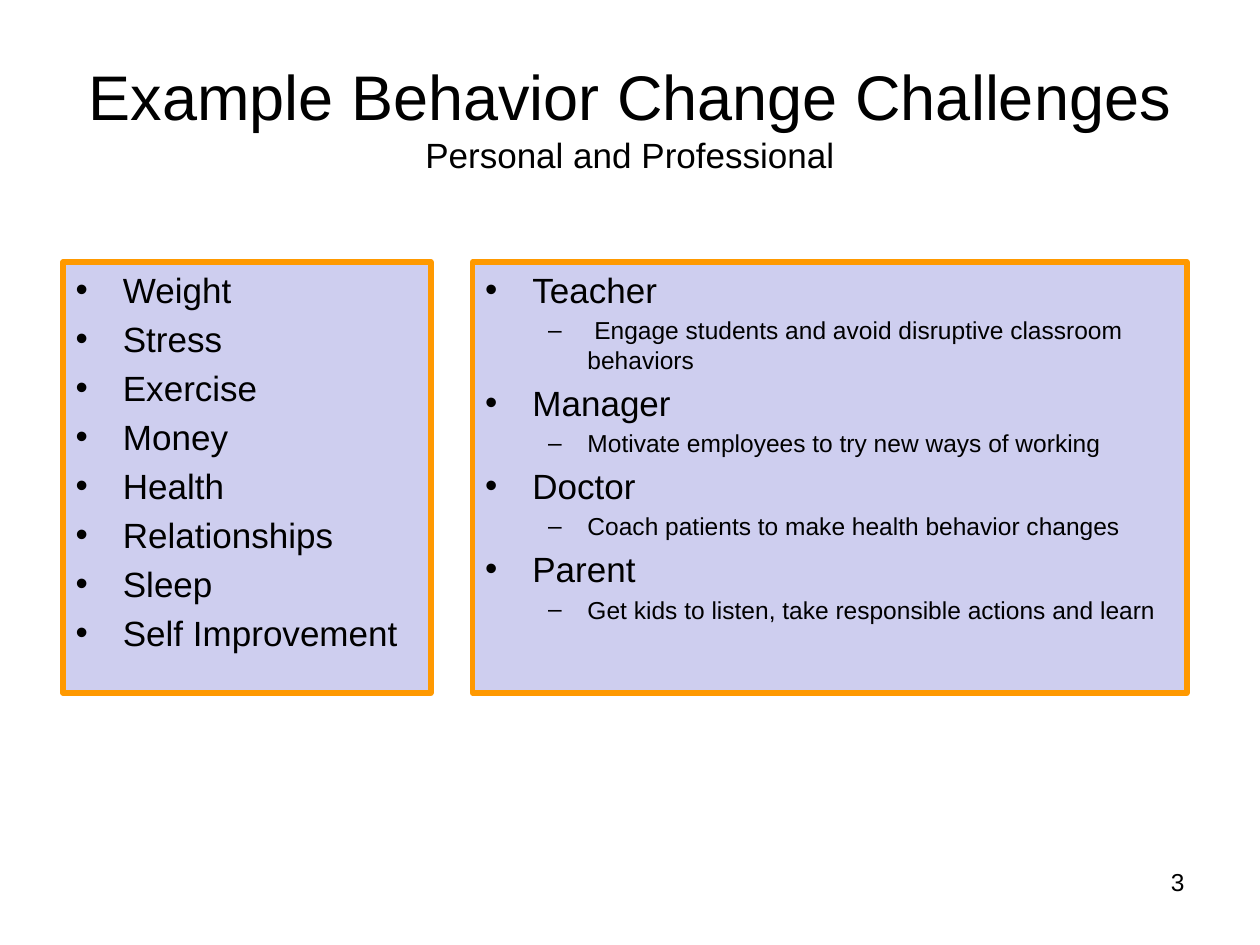
from dataclasses import dataclass

from pptx import Presentation
from pptx.dml.color import RGBColor
from pptx.enum.text import MSO_ANCHOR, MSO_AUTO_SIZE, PP_ALIGN
from pptx.util import Inches, Pt

CENTER, RIGHT = PP_ALIGN.CENTER, PP_ALIGN.RIGHT
MIDDLE, TOP = MSO_ANCHOR.MIDDLE, MSO_ANCHOR.TOP
NO_FIT = MSO_AUTO_SIZE.NONE
TWO_CONTENT = 3


@dataclass(frozen=True)
class Theme:
    font: str = "Arial"
    ink: RGBColor = RGBColor(0x00, 0x00, 0x00)
    panel: RGBColor = RGBColor(0xCE, 0xCE, 0xEF)
    border: RGBColor = RGBColor(0xFF, 0x99, 0x00)
    border_width: Pt = Pt(3)
    heading: Pt = Pt(36)
    item: Pt = Pt(20)
    detail: Pt = Pt(14)


THEME = Theme()
PANEL_TOP, PANEL_HEIGHT = 2.08, 3.42

PERSONAL = ["Weight", "Stress", "Exercise", "Money", "Health",
            "Relationships", "Sleep", "Self Improvement"]
PROFESSIONAL = {
    "Teacher": " Engage students and avoid disruptive classroom behaviors",
    "Manager": "Motivate employees to try new ways of working",
    "Doctor": "Coach patients to make health behavior changes",
    "Parent": "Get kids to listen, take responsible actions and learn",
}


def place(element, left, top, width, height):
    element.left, element.top = Inches(left), Inches(top)
    element.width, element.height = Inches(width), Inches(height)


def style(font, size):
    font.name = THEME.font
    font.size = size
    font.color.rgb = THEME.ink


def fill_title(title, heading, subtitle):
    place(title, 0.5, 0.3, 9, 1.25)
    frame = title.text_frame
    frame.auto_size = NO_FIT
    frame.vertical_anchor = MIDDLE
    line = frame.paragraphs[0]
    line.alignment = CENTER
    heading_run = line.add_run()
    heading_run.text = heading
    style(heading_run.font, THEME.heading)
    line.add_line_break()
    subtitle_run = line.add_run()
    subtitle_run.text = subtitle
    style(subtitle_run.font, THEME.item)


def fill_panel(panel, left, width, entries):
    place(panel, left, PANEL_TOP, width, PANEL_HEIGHT)
    panel.fill.solid()
    panel.fill.fore_color.rgb = THEME.panel
    panel.line.color.rgb = THEME.border
    panel.line.width = THEME.border_width
    frame = panel.text_frame
    frame.auto_size = NO_FIT
    frame.vertical_anchor = TOP
    frame.text = "\n".join(text for text, _ in entries)
    for paragraph, (_, level) in zip(frame.paragraphs, entries):
        paragraph.level = level
        style(paragraph.font, THEME.detail if level else THEME.item)


def add_page_number(slide, number):
    page = slide.shapes.add_textbox(
        Inches(7.17), Inches(6.83), Inches(2.33), Inches(0.52))
    page.text_frame.word_wrap = True
    line = page.text_frame.paragraphs[0]
    line.text = number
    line.alignment = RIGHT
    style(line.font, THEME.detail)


def main():
    deck = Presentation()
    deck.slide_width, deck.slide_height = Inches(10), Inches(7.5)
    slide = deck.slides.add_slide(deck.slide_layouts[TWO_CONTENT])
    title, personal, professional = slide.placeholders

    fill_title(title, "Example Behavior Change Challenges",
               "Personal and Professional")
    fill_panel(personal, 0.5, 2.92, [(topic, 0) for topic in PERSONAL])
    roles = [entry for role, challenge in PROFESSIONAL.items()
             for entry in ((role, 0), (challenge, 1))]
    fill_panel(professional, 3.75, 5.67, roles)
    add_page_number(slide, "3")
    deck.save("out.pptx")


if __name__ == "__main__":
    main()
